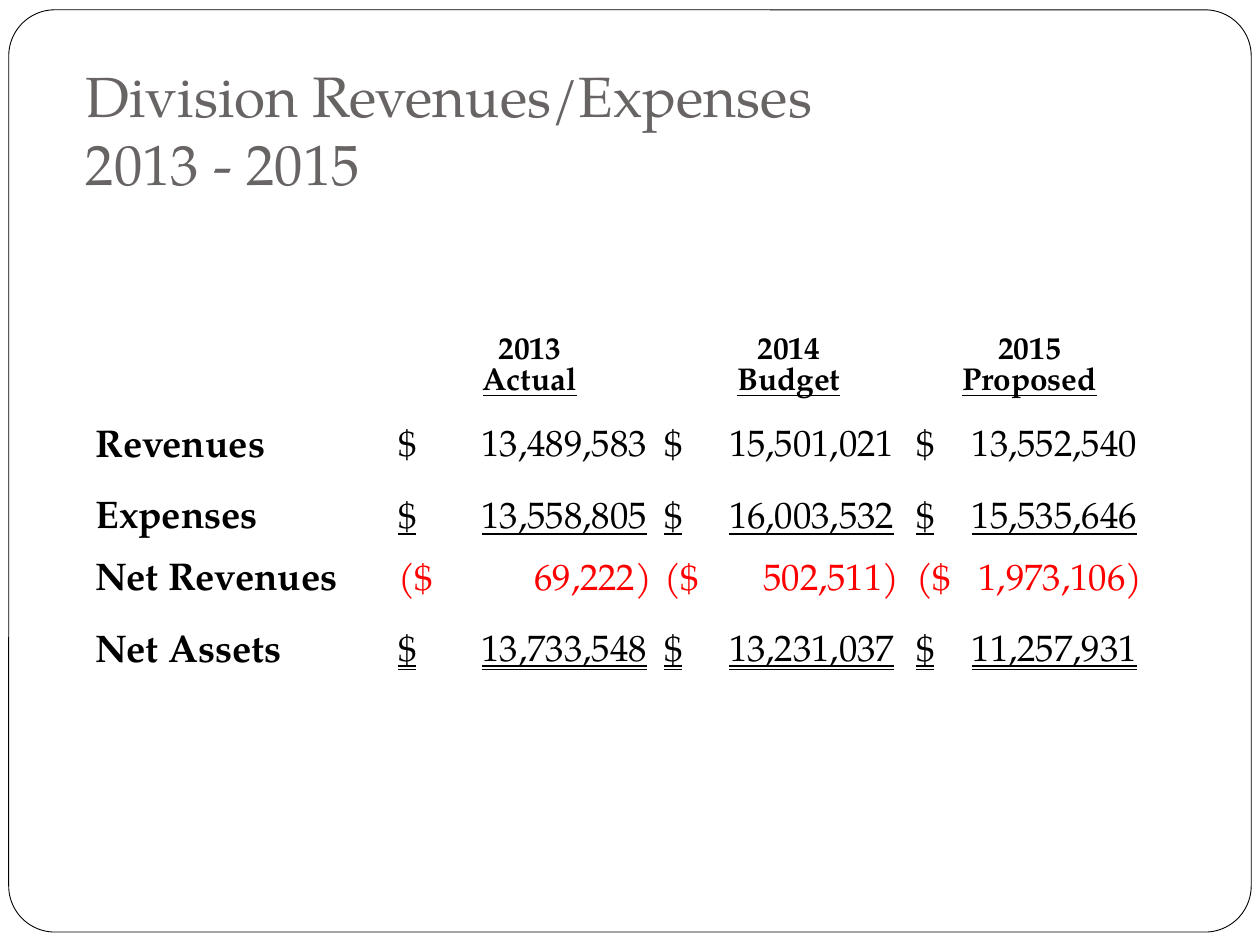
from pptx import Presentation
from pptx import util as u
from pptx.dml import color
from pptx.enum import shapes, text
from lxml import etree

Pt = u.Pt
FONT = "TeX Gyre Pagella"
PLAIN_TABLE_STYLE = "{2D5ABB26-0587-4C30-8999-92F81FD0307C}"
COLORS = {"paper": "FFFFFF", "ink": "000000", "title": "696464", "loss": "FF0000"}


def add_run(para, words, size, shade="ink", bold=False, underline=False):
    span = para.add_run()
    span.text = words
    span.font.name = FONT
    span.font.size = Pt(size)
    span.font.bold = bold
    span.font.underline = underline
    span.font.color.rgb = color.RGBColor.from_string(COLORS[shade])


def add_right_tab(para, position):
    properties = para._p.get_or_add_pPr()
    namespace = properties.nsmap["a"]
    tabs = etree.SubElement(properties, f"{{{namespace}}}tabLst")
    etree.SubElement(tabs, f"{{{namespace}}}tab", pos=str(Pt(position)), algn="r")


deck = Presentation()
deck.slide_width, deck.slide_height = Pt(720), Pt(540)
page = deck.slides.add_slide(deck.slide_layouts[5])

title = page.shapes.title
title.left, title.top, title.width, title.height = Pt(41.8), Pt(44.6), Pt(564.5), Pt(74.9)
frame = title.text_frame
frame.word_wrap = True
frame.auto_size = text.MSO_AUTO_SIZE.NONE
frame.vertical_anchor = text.MSO_ANCHOR.BOTTOM
frame.margin_left = frame.margin_right = frame.margin_bottom = Pt(7.2)
frame.margin_top = Pt(3.6)
para = frame.paragraphs[0]
para.alignment = text.PP_ALIGN.LEFT
add_run(para, "Division Revenues/Expenses", 32.4, "title")
para.add_line_break()
add_run(para, "2013 - 2015", 32.4, "title")

border = page.shapes.add_shape(
    shapes.MSO_SHAPE.ROUNDED_RECTANGLE, Pt(5), Pt(5.6), Pt(710), Pt(527)
)
border.adjustments[0] = 0.05
border.shadow.inherit = False
border.fill.solid()
border.fill.fore_color.rgb = color.RGBColor.from_string(COLORS["paper"])
border.line.color.rgb = color.RGBColor.from_string(COLORS["ink"])
border.line.width = Pt(0.5)
title.element.addprevious(border.element)

column_widths = [172.8, 152, 144, 131]
row_heights = [38.9, 38.9, 41, 35.3, 41]
number_edges = [142.2, 131.6, 126.3]
bracket_overhang = 3
headings = [("2013", "Actual"), ("2014", "Budget"), ("2015", "Proposed")]
SINGLE = text.MSO_UNDERLINE.SINGLE_LINE
DOUBLE = text.MSO_UNDERLINE.DOUBLE_LINE
rows = [
    ("Revenues", ["13,489,583", "15,501,021", "13,552,540"], "ink", False),
    ("Expenses", ["13,558,805", "16,003,532", "15,535,646"], "ink", SINGLE),
    ("Net Revenues", ["69,222", "502,511", "1,973,106"], "loss", False),
    ("Net Assets", ["13,733,548", "13,231,037", "11,257,931"], "ink", DOUBLE),
]

table = page.shapes.add_table(
    len(row_heights), len(column_widths), Pt(54), Pt(189),
    Pt(sum(column_widths)), Pt(sum(row_heights)),
).table
table.first_row = table.horz_banding = False
table._tbl.tblPr[0].text = PLAIN_TABLE_STYLE
for column, width in zip(table.columns, column_widths):
    column.width = Pt(width)
for row, height in zip(table.rows, row_heights):
    row.height = Pt(height)
for cell in table.iter_cells():
    cell.fill.background()
    cell.vertical_anchor = text.MSO_ANCHOR.BOTTOM
    cell.margin_left = cell.margin_right = cell.margin_top = Pt(0.7)
    cell.margin_bottom = Pt(0)

for column, (year, basis) in enumerate(headings, 1):
    frame = table.cell(0, column).text_frame
    for para, words, underline in (
        (frame.paragraphs[0], year, False),
        (frame.add_paragraph(), basis, True),
    ):
        para.alignment = text.PP_ALIGN.CENTER
        add_run(para, words, 18, bold=True, underline=underline)

for row, (label, amounts, shade, underline) in enumerate(rows, 1):
    add_run(table.cell(row, 0).text_frame.paragraphs[0], label, 22, bold=True)
    for column, (amount, edge) in enumerate(zip(amounts, number_edges), 1):
        para = table.cell(row, column).text_frame.paragraphs[0]
        if shade == "loss":
            words, edge = f"($\t{amount})", edge + bracket_overhang
        else:
            words = f"$\t{amount}"
        add_right_tab(para, edge)
        add_run(para, words, 21, shade, underline=underline)

deck.save("out.pptx")
